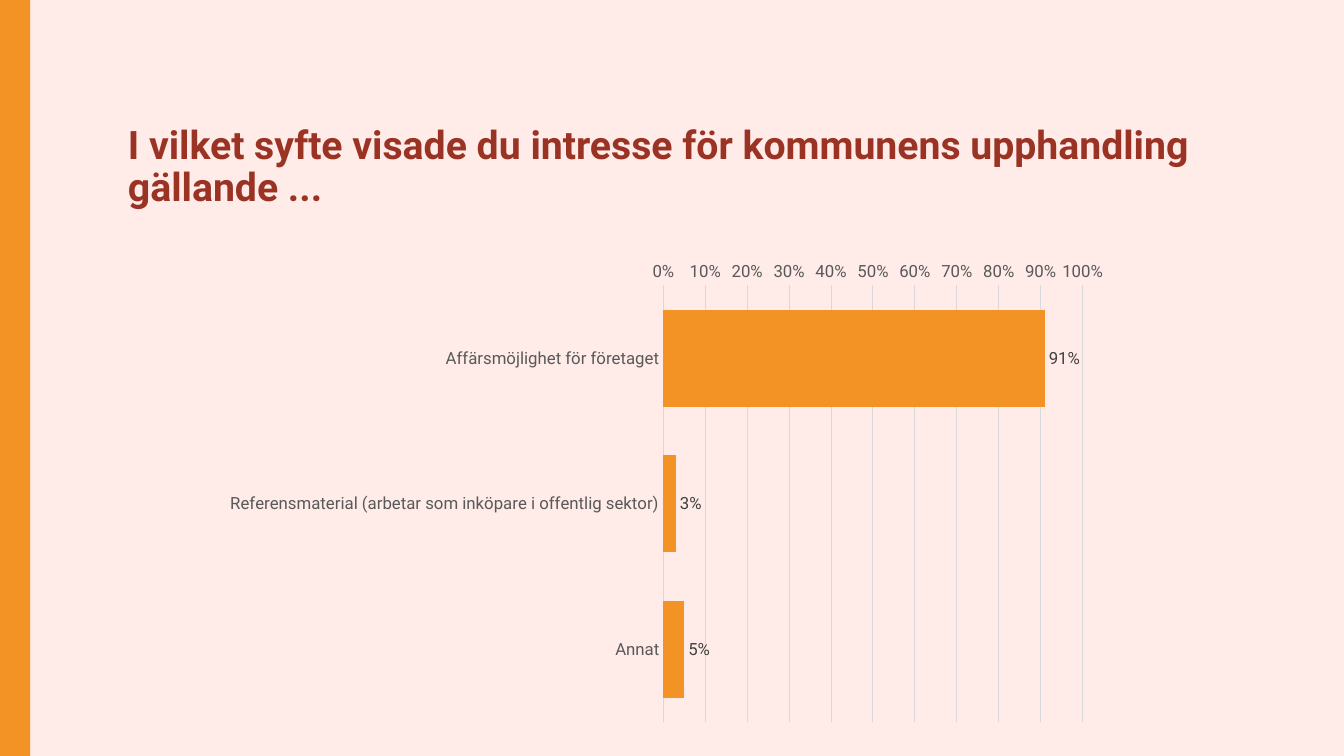
from lxml import etree
from pptx import Presentation
from pptx import util as u
from pptx.chart import data as chart_data
from pptx.dml import color
from pptx.enum import chart as ch, shapes, text
from pptx.oxml import ns

FONT = "Roboto"
ORANGE = "F39325"
GRID = "D9D9D9"
LABEL_FORMAT = {"size": u.Pt(12), "bold": False, "name": FONT}
TITLE_FORMAT = {"size": u.Pt(28), "bold": True, "name": FONT}
PURPOSES = {
    "Affärsmöjlighet för företaget": 0.91,
    "Referensmaterial (arbetar som inköpare i offentlig sektor)": 0.03,
    "Annat": 0.05,
}
PLOT_BOX = {"x": 0.49, "y": 0.07, "w": 0.46, "h": 0.91}


def rgb(value):
    return color.RGBColor.from_string(value)


def inches(box):
    return [u.Inches(length) for length in box]


def paint(fill, value):
    fill.solid()
    fill.fore_color.rgb = rgb(value)


def style(target, values):
    for key, value in values.items():
        setattr(target, key, value)


def style_font(font, values, value):
    style(font, values)
    font.color.rgb = rgb(value)


def draw_line(line, value):
    line.color.rgb = rgb(value)
    line.width = u.Pt(0.75)


def add_side_band(slide, box):
    band = slide.shapes.add_shape(shapes.MSO_SHAPE.RECTANGLE, *inches(box))
    band.shadow.inherit = False
    paint(band.fill, ORANGE)
    band.line.fill.background()


def add_title(slide, box, wording):
    frame = slide.shapes.add_textbox(*inches(box)).text_frame
    style(frame, {"word_wrap": True, "vertical_anchor": text.MSO_ANCHOR.MIDDLE})
    question = frame.paragraphs[0]
    question.line_spacing = 0.9
    question.text = wording
    style_font(question.runs[0].font, TITLE_FORMAT, "9A3324")


def place_plot(chart, box):
    plot_area = chart.plots[0]._element.getparent()
    for old in plot_area.findall(ns.qn("c:layout")):
        plot_area.remove(old)
    layout = etree.Element(ns.qn("c:layout"))
    plot_area.insert(0, layout)
    manual = etree.SubElement(layout, ns.qn("c:manualLayout"))
    settings = {"layoutTarget": "inner", "xMode": "edge", "yMode": "edge", **box}
    for tag, value in settings.items():
        etree.SubElement(manual, ns.qn(f"c:{tag}")).set("val", str(value))


def add_purpose_chart(slide, box, purposes):
    answers = chart_data.CategoryChartData(number_format="0%")
    answers.categories = list(purposes)
    answers.add_series("Series 1", list(purposes.values()))
    chart = slide.shapes.add_chart(
        ch.XL_CHART_TYPE.BAR_CLUSTERED, *inches(box), answers
    ).chart
    style(chart, {"has_legend": False, "has_title": False})
    style_font(chart.font, {"name": FONT, "size": u.Pt(10)}, "000000")

    purpose_axis, share_axis = chart.category_axis, chart.value_axis
    for axis in (purpose_axis, share_axis):
        axis.major_tick_mark = axis.minor_tick_mark = ch.XL_TICK_MARK.NONE
        style_font(axis.tick_labels.font, LABEL_FORMAT, "595959")
    purpose_axis.reverse_order = True
    draw_line(purpose_axis.format.line, GRID)
    style(share_axis, {"minimum_scale": 0, "maximum_scale": 1, "major_unit": 0.1})
    style(share_axis.tick_labels, {"number_format": "0%", "number_format_is_linked": False})
    share_axis.format.line.fill.background()
    draw_line(share_axis.major_gridlines.format.line, GRID)

    plot = chart.plots[0]
    style(plot, {"gap_width": 50, "vary_by_categories": False})
    shares = plot.series[0]
    paint(shares.format.fill, ORANGE)
    style(shares.data_labels, {
        "show_value": True,
        "position": ch.XL_LABEL_POSITION.OUTSIDE_END,
        "number_format": "0%",
        "number_format_is_linked": False,
    })
    style_font(shares.data_labels.font, LABEL_FORMAT, "404040")
    place_plot(chart, PLOT_BOX)


def main():
    deck = Presentation()
    style(deck, {"slide_width": u.Inches(13.33), "slide_height": u.Inches(7.5)})
    slide = deck.slides.add_slide(deck.slide_layouts[6])
    paint(slide.background.fill, "FFEBE8")
    add_side_band(slide, (0, 0, 0.3, 7.5))
    add_purpose_chart(slide, (2.15, 2.5, 9.04, 4.76), PURPOSES)
    add_title(
        slide,
        (1.17, 1.17, 11.95, 0.99),
        "I vilket syfte visade du intresse för kommunens upphandling gällande ...",
    )
    deck.save("out.pptx")


if __name__ == "__main__":
    main()
